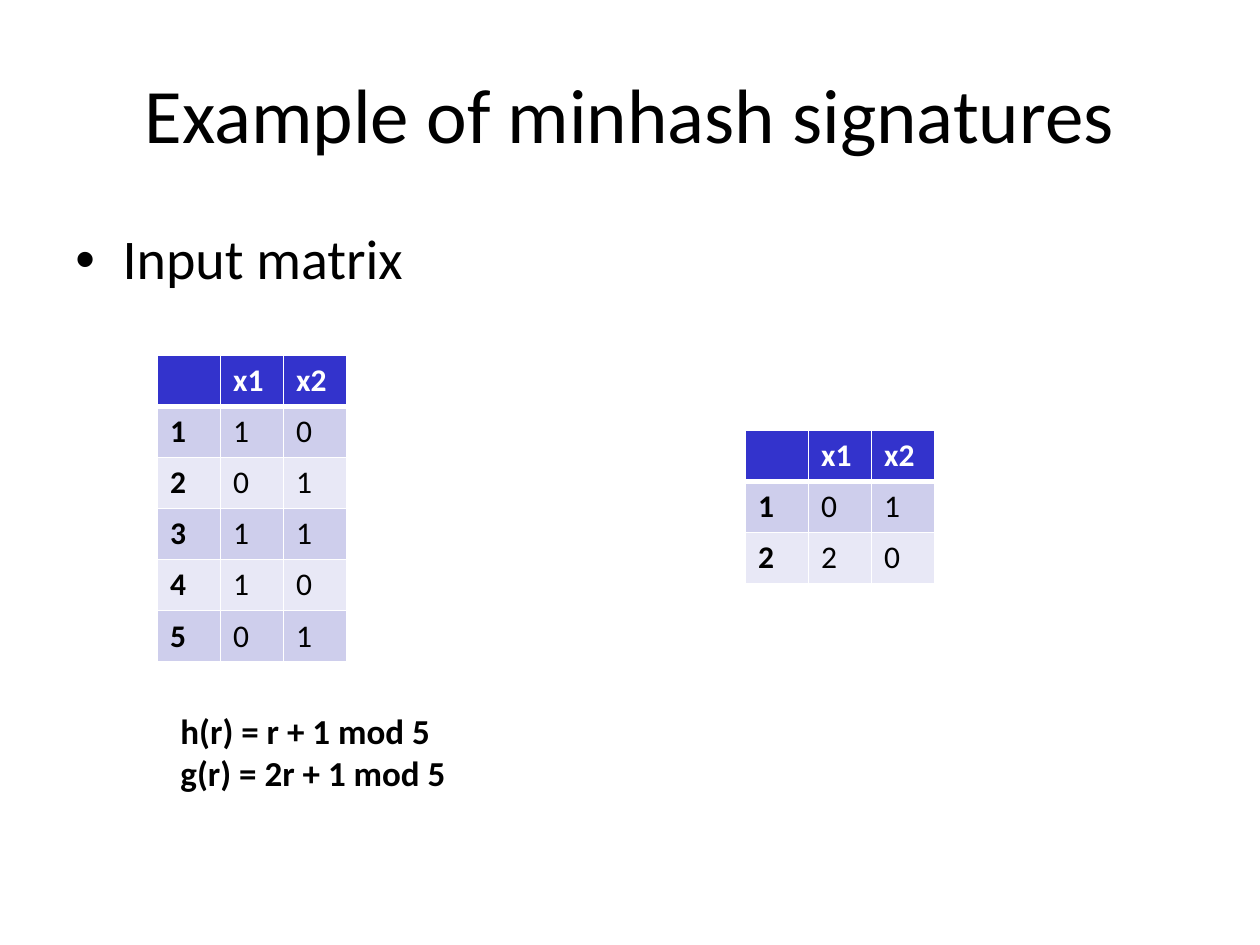
from pptx import Presentation
from pptx.dml.color import RGBColor
from pptx.enum.text import MSO_ANCHOR as Anchor, PP_ALIGN as Align
from pptx.oxml.ns import qn
from pptx.util import Pt
from lxml.etree import SubElement

FONT = "Calibri"
BLACK = RGBColor(0x00, 0x00, 0x00)
WHITE = RGBColor(0xFF, 0xFF, 0xFF)
HEADER = RGBColor(0x33, 0x33, 0xCC)
BANDS = (RGBColor(0xCE, 0xCE, 0xEC), RGBColor(0xE8, 0xE8, 0xF6))

COLUMN_WIDTH, ROW_HEIGHT = 36, 29.2

INPUT_MATRIX = [
    ("", "x1", "x2"),
    ("1", "1", "0"),
    ("2", "0", "1"),
    ("3", "1", "1"),
    ("4", "1", "0"),
    ("5", "0", "1"),
]
SIGNATURES = [("", "x1", "x2"), ("1", "0", "1"), ("2", "2", "0")]


def write(para, text, size=18, color=BLACK, bold=False, align=None,
          spacing=None, before=None):
    """Add formatted text to a paragraph."""
    para.alignment = align
    para.line_spacing = spacing
    para.space_before = None if before is None else Pt(before)
    span = para.add_run()
    span.text = text
    span.font.name = FONT
    span.font.size = Pt(size)
    span.font.bold = bold
    span.font.color.rgb = color


def add_bullet(para, indent):
    """Give a paragraph a round bullet with a hanging indent."""
    props = para._p.get_or_add_pPr()
    props.set("marL", str(Pt(indent)))
    props.set("indent", str(-Pt(indent)))
    SubElement(props, qn("a:buFont"), typeface="Arial")
    SubElement(props, qn("a:buChar"), char="•")


def add_text(page, lines, left, top, width, height, anchor=Anchor.TOP, **style):
    """Add a text box with one paragraph per line."""
    box = page.shapes.add_textbox(Pt(left), Pt(top), Pt(width), Pt(height))
    frame = box.text_frame
    frame.word_wrap = True
    frame.vertical_anchor = anchor
    for index, line in enumerate(lines):
        para = frame.add_paragraph() if index else frame.paragraphs[0]
        write(para, line, **style)
    return frame


def add_borders(cell, bottom):
    """Draw white cell borders, with the bottom one of the given width."""
    props = cell._tc.get_or_add_tcPr()
    for side, width in (("L", 1), ("R", 1), ("T", 1), ("B", bottom)):
        line = SubElement(props, qn(f"a:ln{side}"), w=str(Pt(width)))
        fill = SubElement(line, qn("a:solidFill"))
        SubElement(fill, qn("a:srgbClr"), val=str(WHITE))


def add_matrix(page, rows, left, top):
    """Add a banded table with a header row and bold row labels."""
    row_count, column_count = len(rows), len(rows[0])
    table = page.shapes.add_table(
        row_count, column_count, Pt(left), Pt(top),
        Pt(COLUMN_WIDTH * column_count), Pt(ROW_HEIGHT * row_count)).table
    for column in table.columns:
        column.width = Pt(COLUMN_WIDTH)
    for r, values in enumerate(rows):
        table.rows[r].height = Pt(ROW_HEIGHT)
        is_header = r == 0
        for c, value in enumerate(values):
            cell = table.cell(r, c)
            # The rule under the header stays thick on both sides of the edge
            add_borders(cell, bottom=3 if is_header else 1)
            cell.fill.solid()
            cell.fill.fore_color.rgb = HEADER if is_header else BANDS[(r - 1) % 2]
            if value:
                write(cell.text_frame.paragraphs[0], value,
                      color=WHITE if is_header else BLACK,
                      bold=is_header or c == 0)


def main():
    deck = Presentation()
    deck.slide_width, deck.slide_height = Pt(720), Pt(540)
    page = deck.slides.add_slide(deck.slide_layouts[6])

    # Title and bullet
    add_text(page, ["Example of minhash signatures"], 36, 10, 648, 113,
             anchor=Anchor.MIDDLE, size=44, align=Align.CENTER, spacing=0.98)
    body = add_text(page, ["Input matrix"], 36, 126, 648, 356.4,
                    size=32, spacing=0.98, before=8)
    add_bullet(body.paragraphs[0], 27)

    # Input matrix and its signatures
    add_matrix(page, INPUT_MATRIX, 90, 203)
    add_matrix(page, SIGNATURES, 426, 246)

    # Hash functions
    add_text(page, ["h(r) = r + 1 mod 5", "g(r) = 2r + 1 mod 5"],
             96, 402, 192, 55.4, size=20, bold=True)

    deck.save("out.pptx")


if __name__ == "__main__":
    main()
